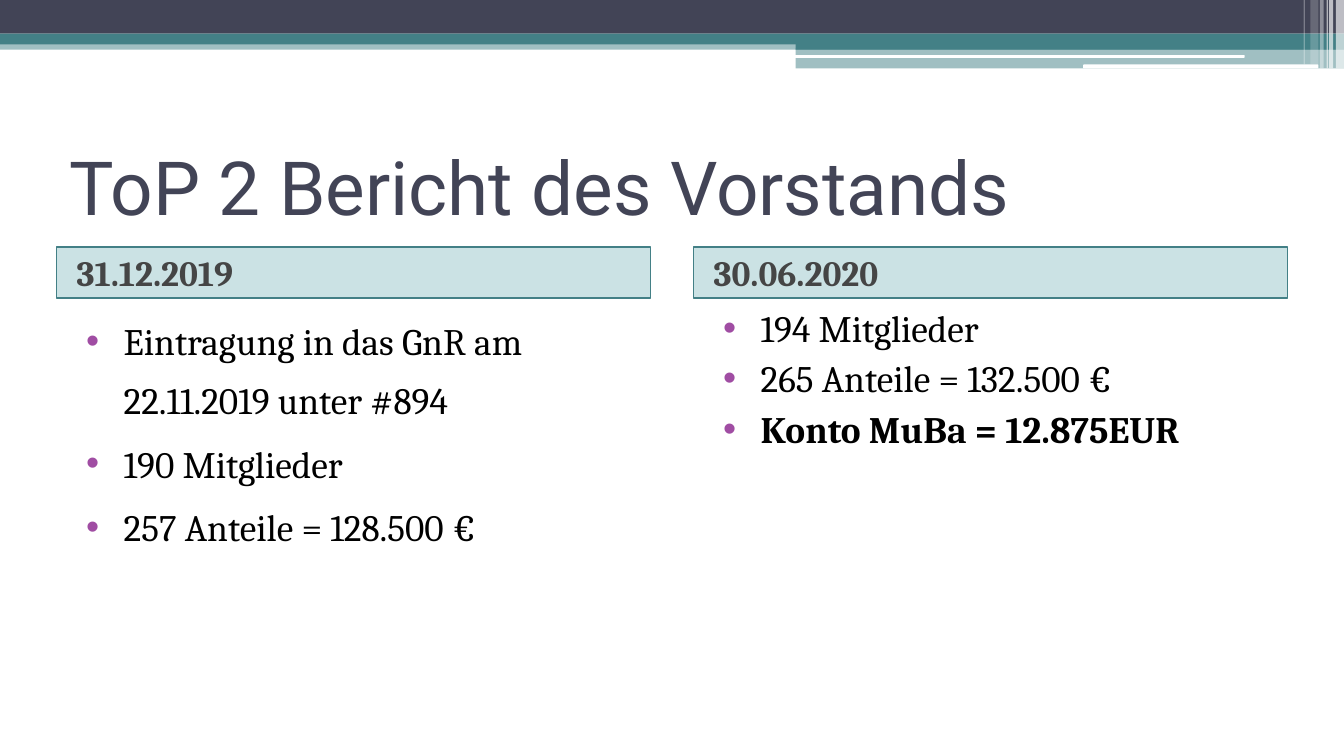
"""Build the board report slide comparing two reporting dates."""
from dataclasses import dataclass

from lxml import etree
from pptx import Presentation
from pptx.dml.color import RGBColor
from pptx.enum.shapes import MSO_SHAPE
from pptx.enum.text import MSO_ANCHOR, MSO_AUTO_SIZE, PP_ALIGN
from pptx.oxml.ns import qn
from pptx.util import Inches, Pt

RECTANGLE = MSO_SHAPE.RECTANGLE
ROUNDED = MSO_SHAPE.ROUNDED_RECTANGLE
TOP, MIDDLE = MSO_ANCHOR.TOP, MSO_ANCHOR.MIDDLE
LEFT = PP_ALIGN.LEFT
NO_AUTOFIT = MSO_AUTO_SIZE.NONE


@dataclass(frozen=True)
class Theme:
    navy: str = "424456"
    teal: str = "438086"
    header_fill: str = "328E97"
    header_text: str = "454545"
    bullet: str = "A04DA3"
    black: str = "000000"
    white: str = "FFFFFF"
    title_font: str = "Roboto"
    body_font: str = "Cambria"
    title_size: int = 40
    header_size: int = 19
    body_size: int = 20


theme = Theme()


def paint(shape, color, opacity=100):
    shape.fill.solid()
    shape.fill.fore_color.rgb = RGBColor.from_string(color)
    if opacity < 100:
        color_node = shape.fill._xPr.find(qn("a:solidFill"))[0]
        etree.SubElement(color_node, qn("a:alpha"), val=str(opacity * 1000))


def write(paragraph, text, font, size, color, bold=False):
    paragraph.alignment = LEFT
    span = paragraph.add_run()
    span.text = text
    span.font.name = font
    span.font.size = Pt(size)
    span.font.bold = bold
    span.font.color.rgb = RGBColor.from_string(color)


deck = Presentation()
deck.slide_width, deck.slide_height = Inches(10), Inches(10 * 9 / 16)
page = deck.slides.add_slide(deck.slide_layouts.get_by_name("Comparison"))

bands = [
    (RECTANGLE, 0, 0.3, 10, 0.07, theme.teal, 50),
    (RECTANGLE, 0, 0, 10, 0.25, theme.navy, 100),
    (RECTANGLE, 0, 0.25, 10, 0.08, theme.teal, 100),
    (RECTANGLE, 5.92, 0.3, 4.08, 0.07, theme.teal, 100),
    (RECTANGLE, 5.92, 0.36, 4.08, 0.15, theme.teal, 50),
    (ROUNDED, 5.91, 0.41, 3.35, 0.02, theme.white, 100),
    (ROUNDED, 8.06, 0.48, 1.75, 0.03, theme.white, 100),
]
stripes = [
    (9.94, 0.06, 0.51, 65),
    (9.89, 0.03, 0.51, 65),
    (9.87, 0.01, 0.51, 60),
    (9.82, 0.03, 0.51, 40),
    (9.75, 0.06, 0.48, 20),
    (9.7, 0.01, 0.48, 30),
]
bands += [
    (RECTANGLE, left, 0, width, height, theme.white, opacity)
    for left, width, height, opacity in stripes
]
for kind, left, top, width, height, color, opacity in bands:
    band = page.shapes.add_shape(
        kind, Inches(left), Inches(top), Inches(width), Inches(height)
    )
    band.shadow.inherit = False
    band.line.fill.background()
    paint(band, color, opacity)

margin, column_width, column_step = 0.42, 4.42, 4.74
columns = [
    ("31.12.2019", 1.93, 1.3, [
        ("Eintragung in das GnR am 22.11.2019 unter #894", False),
        ("190 Mitglieder", False),
        ("257 Anteile = 128.500 €", False),
    ]),
    ("30.06.2020", 1.38, 1.0, [
        ("194 Mitglieder", False),
        ("265 Anteile = 132.500 €", False),
        ("Konto MuBa = 12.875EUR", True),
    ]),
]

title = page.shapes.title
header_boxes = [page.placeholders[1], page.placeholders[3]]
list_boxes = [page.placeholders[2], page.placeholders[4]]
places = [(title, margin, 0.94, 9.17, 0.88, MIDDLE)]
for index, (date, list_height, spacing, items) in enumerate(columns):
    left = margin + index * column_step
    places += [
        (header_boxes[index], left, 1.84, column_width, 0.38, MIDDLE),
        (list_boxes[index], left, 2.22, column_width, list_height, TOP),
    ]
for box, left, top, width, height, anchor in places:
    box.left, box.top = Inches(left), Inches(top)
    box.width, box.height = Inches(width), Inches(height)
    frame = box.text_frame
    frame.word_wrap = True
    frame.auto_size = NO_AUTOFIT
    frame.vertical_anchor = anchor
    frame.margin_left = frame.margin_right = Inches(0.1)
    frame.margin_top = frame.margin_bottom = Inches(0.05)

write(title.text_frame.paragraphs[0], "ToP 2 Bericht des Vorstands",
      theme.title_font, theme.title_size, theme.navy)

for header, listing, column in zip(header_boxes, list_boxes, columns):
    date, list_height, spacing, items = column
    paint(header, theme.header_fill, 25)
    header.line.color.rgb = RGBColor.from_string(theme.teal)
    header.line.width = Pt(1)
    paragraph = header.text_frame.paragraphs[0]
    paragraph.space_before = Pt(0)
    paragraph._p.get_or_add_pPr().set("marL", str(Inches(0.05)))
    write(paragraph, date, theme.body_font, theme.header_size,
          theme.header_text, True)

    frame = listing.text_frame
    for number, (text, bold) in enumerate(items):
        paragraph = frame.add_paragraph() if number else frame.paragraphs[0]
        paragraph.line_spacing = spacing
        paragraph.space_before = Pt(3 if number else 0)
        properties = paragraph._p.get_or_add_pPr()
        properties.set("marL", str(Inches(0.4)))
        properties.set("indent", str(Inches(-0.28)))
        bullet_color = etree.SubElement(properties, qn("a:buClr"))
        etree.SubElement(bullet_color, qn("a:srgbClr"), val=theme.bullet)
        etree.SubElement(properties, qn("a:buFont"), typeface="Arial")
        etree.SubElement(properties, qn("a:buChar"), char="•")
        write(paragraph, text, theme.body_font, theme.body_size,
              theme.black, bold)

deck.save("out.pptx")
